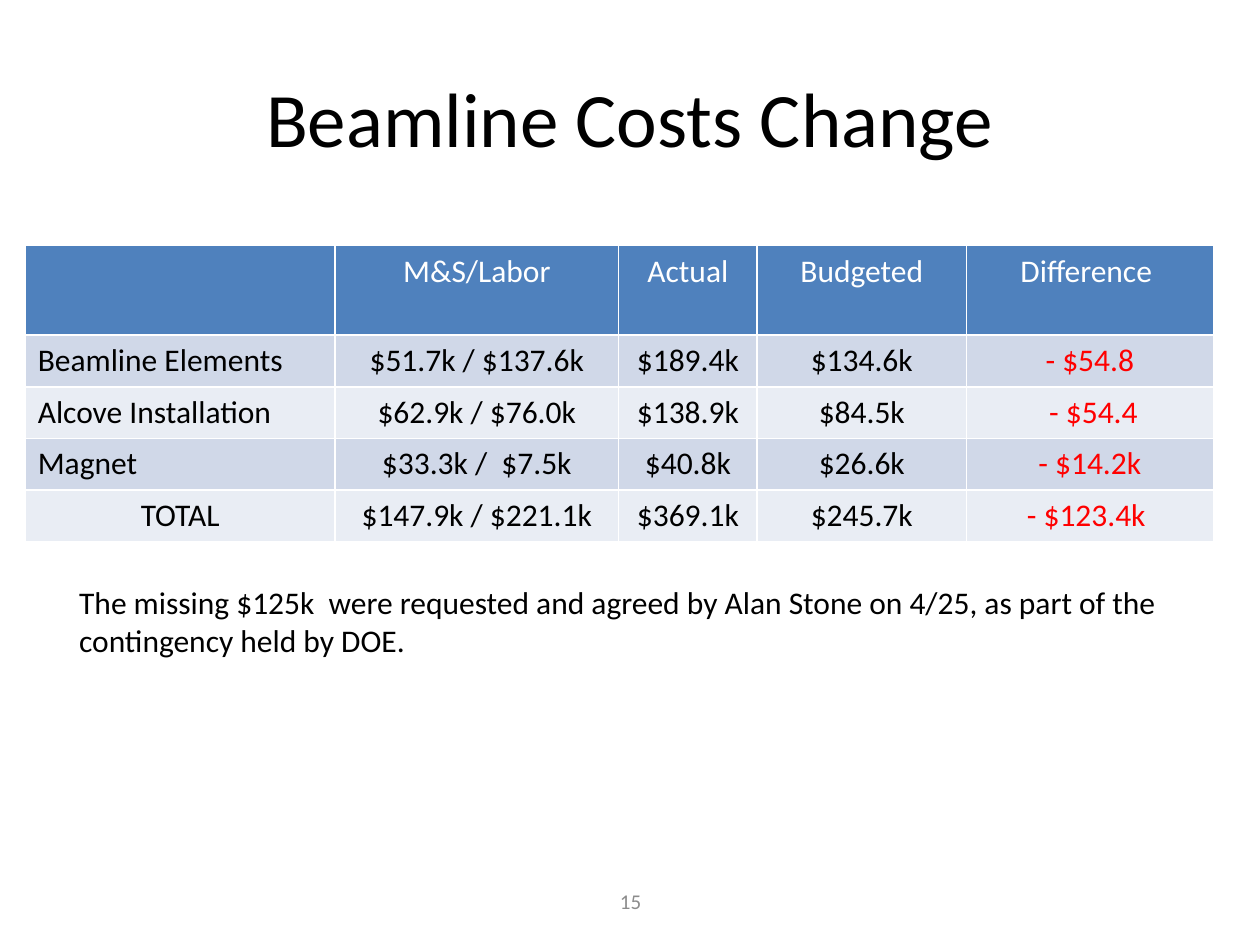
from lxml.etree import SubElement
from pptx import Presentation
from pptx.dml.color import RGBColor
from pptx.enum.text import MSO_ANCHOR, PP_ALIGN
from pptx.oxml.ns import qn
from pptx.util import Inches, Pt

BLACK = RGBColor(0x00, 0x00, 0x00)
WHITE = RGBColor(0xFF, 0xFF, 0xFF)
RED = RGBColor(0xFF, 0x00, 0x00)
GRAY = RGBColor(0x8C, 0x8C, 0x8C)
HEADER_BLUE = RGBColor(0x4F, 0x81, 0xBD)
BANDS = (RGBColor(0xD0, 0xD8, 0xE8), RGBColor(0xE9, 0xED, 0xF4))

COLUMN_WIDTHS = (2.46, 2.25, 1.1, 1.66, 1.96)
ROW_HEIGHTS = (0.71, 0.41, 0.41, 0.41, 0.41)
COSTS = (
    ("", "M&S/Labor", "Actual", "Budgeted", "Difference "),
    ("Beamline Elements", "$51.7k / $137.6k", "$189.4k", "$134.6k", "- $54.8"),
    ("Alcove Installation", "$62.9k / $76.0k", "$138.9k", "$84.5k", " - $54.4"),
    ("Magnet", "$33.3k /  $7.5k", "$40.8k", "$26.6k", "- $14.2k"),
    ("TOTAL", "$147.9k / $221.1k", "$369.1k", "$245.7k", "- $123.4k "),
)
NOTE = (
    "The missing $125k  were requested and agreed by Alan Stone on 4/25, "
    "as part of the contingency held by DOE."
)


class SlideBuilder:
    """Holds the text style and the current slide."""

    font_name = "Calibri"

    def __init__(self, slide):
        self.slide = slide

    def set_text(self, frame, text, size=18, color=BLACK, align=PP_ALIGN.LEFT):
        para = frame.paragraphs[0]
        para.alignment = align
        span = para.add_run()
        span.text = text
        span.font.color.rgb = color
        font_format = {"name": self.font_name, "size": Pt(size)}
        for name, value in font_format.items():
            setattr(span.font, name, value)

    def add_text(self, text, place, anchor=MSO_ANCHOR.TOP, **style):
        box = self.slide.shapes.add_textbox(*map(Inches, place))
        frame_format = {"word_wrap": True, "vertical_anchor": anchor}
        for name, value in frame_format.items():
            setattr(box.text_frame, name, value)
        self.set_text(box.text_frame, text, **style)

    def set_borders(self, cell):
        """Give the cell white borders; call this before setting the fill."""
        properties = cell._tc.get_or_add_tcPr()
        for tag in ("a:lnL", "a:lnR", "a:lnT", "a:lnB"):
            line = SubElement(properties, qn(tag), w=str(Pt(1)))
            fill = SubElement(line, qn("a:solidFill"))
            SubElement(fill, qn("a:srgbClr"), val=str(WHITE))

    def add_table(self, rows, left, top, widths, heights):
        frame = self.slide.shapes.add_table(
            len(rows), len(widths), Inches(left), Inches(top),
            Inches(sum(widths)), Inches(sum(heights)),
        )
        table = frame.table
        for column, width in zip(table.columns, widths):
            column.width = Inches(width)
        for row, height in zip(table.rows, heights):
            row.height = Inches(height)
        for row_index, texts in enumerate(rows):
            for column_index, text in enumerate(texts):
                cell = table.cell(row_index, column_index)
                self.fill_cell(cell, text, row_index, column_index)

    def fill_cell(self, cell, text, row_index, column_index):
        is_header = row_index == 0
        is_label = column_index == 0 and text != "TOTAL"
        is_difference = column_index == len(COLUMN_WIDTHS) - 1
        self.set_borders(cell)
        cell.fill.solid()
        cell.fill.fore_color.rgb = (
            HEADER_BLUE if is_header else BANDS[(row_index - 1) % 2]
        )
        if text:
            color = WHITE if is_header else RED if is_difference else BLACK
            align = PP_ALIGN.LEFT if is_label else PP_ALIGN.CENTER
            self.set_text(cell.text_frame, text, color=color, align=align)


def main():
    deck = Presentation()
    deck.slide_width, deck.slide_height = Inches(10), Inches(7.5)
    page = SlideBuilder(deck.slides.add_slide(deck.slide_layouts[6]))
    centered = {"anchor": MSO_ANCHOR.MIDDLE, "align": PP_ALIGN.CENTER}
    page.add_text("15", (3.42, 6.95, 3.17, 0.4), size=12, color=GRAY, **centered)
    page.add_text("Beamline Costs Change", (0.5, 0.3, 9, 1.25), size=44, **centered)
    page.add_table(COSTS, 0.2, 1.95, COLUMN_WIDTHS, ROW_HEIGHTS)
    page.add_text(NOTE, (0.53, 4.58, 9.13, 1.01))
    deck.save("out.pptx")


if __name__ == "__main__":
    main()
